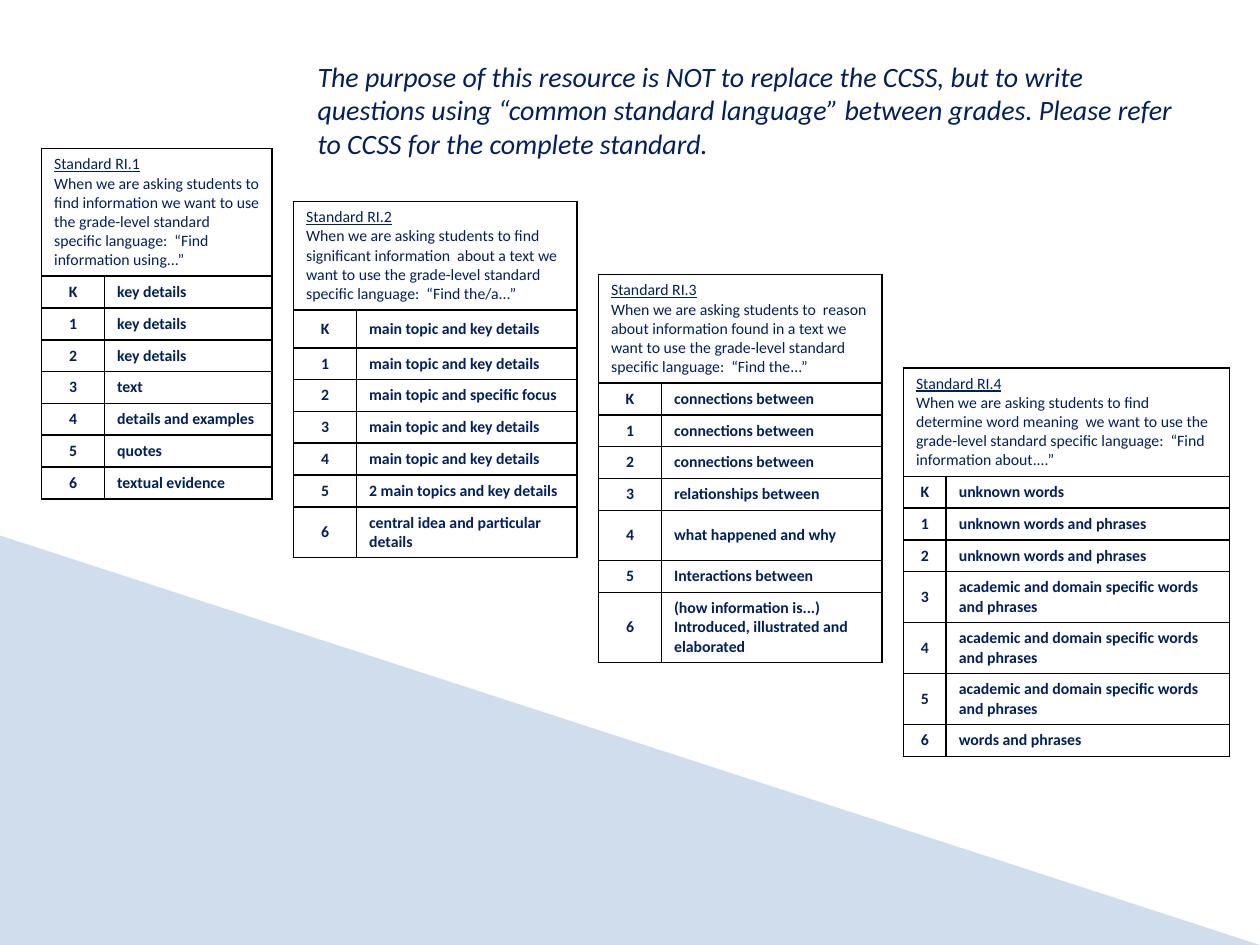
from lxml import etree
from pptx import Presentation
from pptx import util as u
from pptx.dml.color import RGBColor
from pptx.enum import shapes, text
from pptx.oxml.ns import qn

HUES = {"navy": "002060", "line": "000000", "cell": "FFFFFF", "wedge": "CFDDED"}
GRADES = ["K", "1", "2", "3", "4", "5", "6"]
NOTE = ("The purpose of this resource is NOT to replace the CCSS, but to write questions "
        "using “common standard language” between grades. Please refer to CCSS for the "
        "complete standard.")
ASK = "When we are asking students to "
USE = "we want to use the grade-level standard specific language:  "
TOPIC = "main topic and key details"
LINK = "connections between"
WORDS = "academic and domain specific words and phrases"
TABLES = [
    {"name": "Standard RI.1", "at": (0.33, 1.18), "cols": (0.5, 1.33), "head": 1.01, "tall": {},
     "lead": ASK + "find information " + USE + "“Find information using...”",
     "rows": ["key details", "key details", "key details", "text",
              "details and examples", "quotes", "textual evidence"]},
    {"name": "Standard RI.2", "at": (2.33, 1.6), "cols": (0.5, 1.75), "head": 0.86,
     "tall": {"K": 0.3, "6": 0.4},
     "lead": ASK + "find significant information  about a text " + USE + "“Find the/a...”",
     "rows": [TOPIC, TOPIC, "main topic and specific focus", TOPIC, TOPIC,
              "2 main topics and key details", "central idea and particular details"]},
    {"name": "Standard RI.3", "at": (4.75, 2.18), "cols": (0.5, 1.75), "head": 0.86,
     "tall": {"4": 0.4, "6": 0.55},
     "lead": ASK + " reason about information found in a text " + USE + "“Find the...”",
     "rows": [LINK, LINK, LINK, "relationships between", "what happened and why",
              "Interactions between",
              "(how information is...) Introduced, illustrated and elaborated"]},
    {"name": "Standard RI.4", "at": (7.17, 2.92), "cols": (0.34, 2.25), "head": 0.86,
     "tall": {"3": 0.4, "4": 0.4, "5": 0.4},
     "lead": ASK + "find determine word meaning  " + USE + "“Find information about....”",
     "rows": ["unknown words", "unknown words and phrases", "unknown words and phrases",
              WORDS, WORDS, WORDS, "words and phrases"]},
]


def tint(name):
    return RGBColor.from_string(HUES[name])


def style(font, size):
    font.name, font.size = "Calibri", u.Pt(size)
    font.color.rgb = tint("navy")


def frame(cell):
    props = cell._tc.get_or_add_tcPr()
    for side in ("lnL", "lnR", "lnT", "lnB"):
        line = etree.SubElement(props, qn("a:" + side), w=str(u.Pt(1)))
        fill = etree.SubElement(line, qn("a:solidFill"))
        etree.SubElement(fill, qn("a:srgbClr"), val=HUES["line"])
    cell.fill.solid()
    cell.fill.fore_color.rgb = tint("cell")


def write(cell, words, bold=False, align=text.PP_ALIGN.LEFT):
    cell.text = words
    for para in cell.text_frame.paragraphs:
        style(para.font, 9)
        para.font.bold, para.alignment = bold, align


def build(slide, data):
    highs = [data["head"]] + [data["tall"].get(g, 0.25) for g in GRADES]
    size = sum(data["cols"]), sum(highs)
    grid = slide.shapes.add_table(len(highs), 2, *map(u.Inches, data["at"] + size)).table
    grid.first_row = grid.horz_banding = False
    for col, wide in zip(grid.columns, data["cols"]):
        col.width = u.Inches(wide)
    for row, high in zip(grid.rows, highs):
        row.height = u.Inches(high)
    for cell in grid.iter_cells():
        frame(cell)
    head = grid.cell(0, 0)
    head.merge(grid.cell(0, 1))
    write(head, data["name"] + "\n" + data["lead"])
    head.text_frame.paragraphs[0].font.underline = True
    for i, (grade, words) in enumerate(zip(GRADES, data["rows"]), 1):
        write(grid.cell(i, 0), grade, True, text.PP_ALIGN.CENTER)
        write(grid.cell(i, 1), words, True)
        for j in (0, 1):
            grid.cell(i, j).vertical_anchor = text.MSO_ANCHOR.MIDDLE


def main():
    deck = Presentation()
    deck.slide_width, deck.slide_height = u.Inches(10), u.Inches(7.5)
    slide = deck.slides.add_slide(deck.slide_layouts[5])

    title = slide.shapes.title
    title.left, title.top, title.width, title.height = map(u.Inches, (2.42, 0.42, 7.17, 0.91))
    body = title.text_frame
    body.text = NOTE
    body.word_wrap = True
    body.auto_size = text.MSO_AUTO_SIZE.NONE
    body.vertical_anchor = text.MSO_ANCHOR.TOP
    para = body.paragraphs[0]
    para.alignment = text.PP_ALIGN.LEFT
    style(para.font, 16)
    para.font.italic = True

    for data in TABLES:
        build(slide, data)

    wedge = slide.shapes.add_shape(shapes.MSO_SHAPE.RIGHT_TRIANGLE,
                                   *map(u.Inches, (0, 4.25, 10, 3.25)))
    wedge.shadow.inherit = False
    wedge.fill.solid()
    wedge.fill.fore_color.rgb = tint("wedge")
    wedge.line.fill.background()

    deck.save("out.pptx")


if __name__ == "__main__":
    main()
